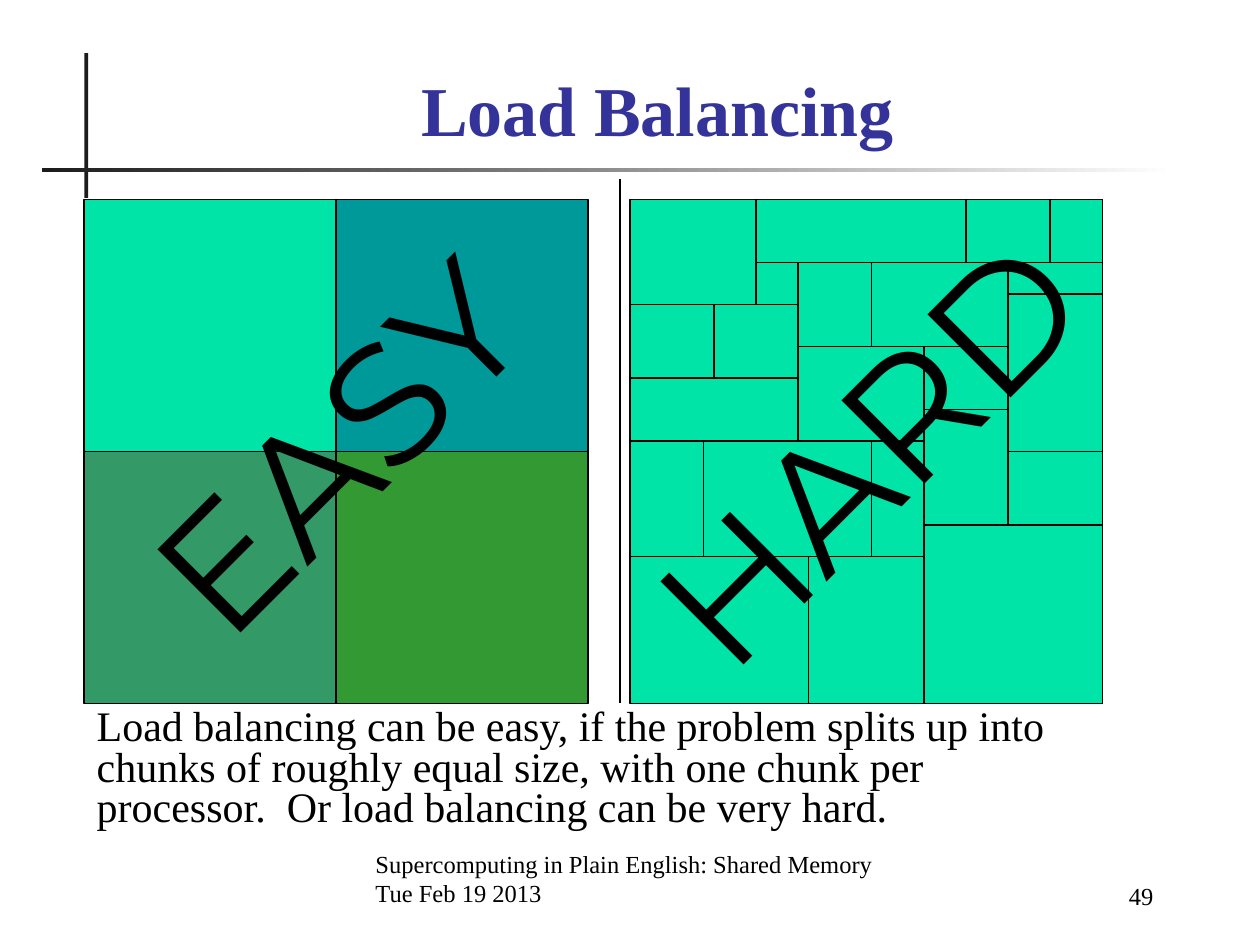
"""Build the Load Balancing slide: an even split beside an uneven one."""
from pptx import Presentation
from pptx.dml.color import RGBColor
from pptx.enum.shapes import MSO_CONNECTOR, MSO_SHAPE
from pptx.enum.text import MSO_ANCHOR, PP_ALIGN
from pptx.oxml.ns import qn
from pptx.util import Cm, Pt
from lxml import etree

RECT = MSO_SHAPE.RECTANGLE
STRAIGHT = MSO_CONNECTOR.STRAIGHT
TOP, BOTTOM = MSO_ANCHOR.TOP, MSO_ANCHOR.BOTTOM
LEFT, CENTER, RIGHT = PP_ALIGN.LEFT, PP_ALIGN.CENTER, PP_ALIGN.RIGHT
COLORS = {
    "ink": "1C1C1C", "white": "FFFFFF", "black": "000000", "title": "333399",
    "mint": "00E4A8", "teal": "009999", "sage": "339966", "green": "339933",
}
RGB = {name: RGBColor.from_string(value) for name, value in COLORS.items()}
UNIT = 2.54 / 12

prs = Presentation()
prs.slide_width, prs.slide_height = Cm(25.4), Cm(19.05)
s = prs.slides.add_slide(prs.slide_layouts[6])


def add_rect(x, y, w, h, fill, outlined=True):
    sp = s.shapes.add_shape(RECT, Cm(x), Cm(y), Cm(w), Cm(h))
    sp.shadow.inherit = False
    sp.fill.solid()
    sp.fill.fore_color.rgb = RGB[fill]
    if outlined:
        sp.line.color.rgb = RGB["black"]
        sp.line.width = Pt(0.75)
    else:
        sp.line.fill.background()
    return sp


def add_text(text, x, y, w, h, size, font="Times New Roman", color="black",
             bold=False, align=LEFT, anchor=TOP, spacing=None, rotation=0):
    sp = s.shapes.add_textbox(Cm(x), Cm(y), Cm(w), Cm(h))
    sp.rotation = rotation
    tf = sp.text_frame
    tf.word_wrap = True
    tf.vertical_anchor = anchor
    tf.text = text
    for p in tf.paragraphs:
        p.alignment = align
        p.line_spacing = spacing
        for r in p.runs:
            r.font.name, r.font.size, r.font.bold = font, Pt(size), bold
            r.font.color.rgb = RGB[color]


add_rect(1.7, 1.07, 0.08, 2.92, "ink", outlined=False)
rule = add_rect(0.84, 3.38, 22.86, 0.08, "ink", outlined=False)
rule.fill.gradient()
rule.fill.gradient_angle = 0
for stop, color in zip(rule.fill.gradient_stops, ("ink", "white")):
    stop.color.rgb = RGB[color]

add_text("Supercomputing in Plain English: Shared Memory\nTue Feb 19 2013",
         7.32, 17.15, 11.1, 1.27, 14, anchor=BOTTOM)
add_text("49", 19.89, 17.2, 3.61, 1.27, 14, align=RIGHT, anchor=BOTTOM)
add_text("Load Balancing", 2.11, 1.27, 22.28, 1.88, 40, color="title",
         bold=True, align=CENTER, anchor=BOTTOM)

top = 19 * UNIT
easy_left, easy_side = 8 * UNIT, 24 * UNIT
for i, color in enumerate(("mint", "teal", "sage", "green")):
    row, col = divmod(i, 2)
    add_rect(easy_left + col * easy_side, top + row * easy_side,
             easy_side, easy_side, color)

hard_left = 60 * UNIT
hard_chunks = [
    (0, 0, 12, 10), (12, 0, 20, 6), (32, 0, 8, 6), (40, 0, 5, 6),
    (12, 6, 4, 4), (16, 6, 7, 8), (23, 6, 13, 8), (36, 6, 9, 3),
    (36, 9, 9, 15), (0, 10, 8, 7), (8, 10, 8, 7), (16, 14, 12, 9),
    (28, 14, 8, 6), (0, 17, 16, 6), (28, 20, 8, 11), (0, 23, 7, 11),
    (7, 23, 16, 11), (23, 23, 5, 11), (36, 24, 9, 7), (28, 31, 17, 17),
    (0, 34, 17, 14), (17, 34, 11, 14),
]
for col, row, w, h in hard_chunks:
    add_rect(hard_left + col * UNIT, top + row * UNIT, w * UNIT, h * UNIT, "mint")

divider = s.shapes.add_connector(STRAIGHT, Cm(12.5), Cm(3.6), Cm(12.5), Cm(14.18))
divider.line.color.rgb = RGB["black"]
divider.line.width = Pt(0.75)
etree.SubElement(divider._element.spPr, qn("a:effectLst"))

add_text("Load balancing can be easy, if the problem splits up into chunks of "
         "roughly equal size, with one chunk per processor.  Or load balancing "
         "can be very hard.", 1.7, 14.18, 20.75, 2.69, 24, spacing=0.8)
for word, x, y, w in (("EASY", 1.27, 6.78, 11), ("HARD", 11.81, 6.88, 11.28)):
    add_text(word, x, y, w, 4.32, 96, font="Montserrat", align=CENTER, rotation=315)

prs.save("out.pptx")
